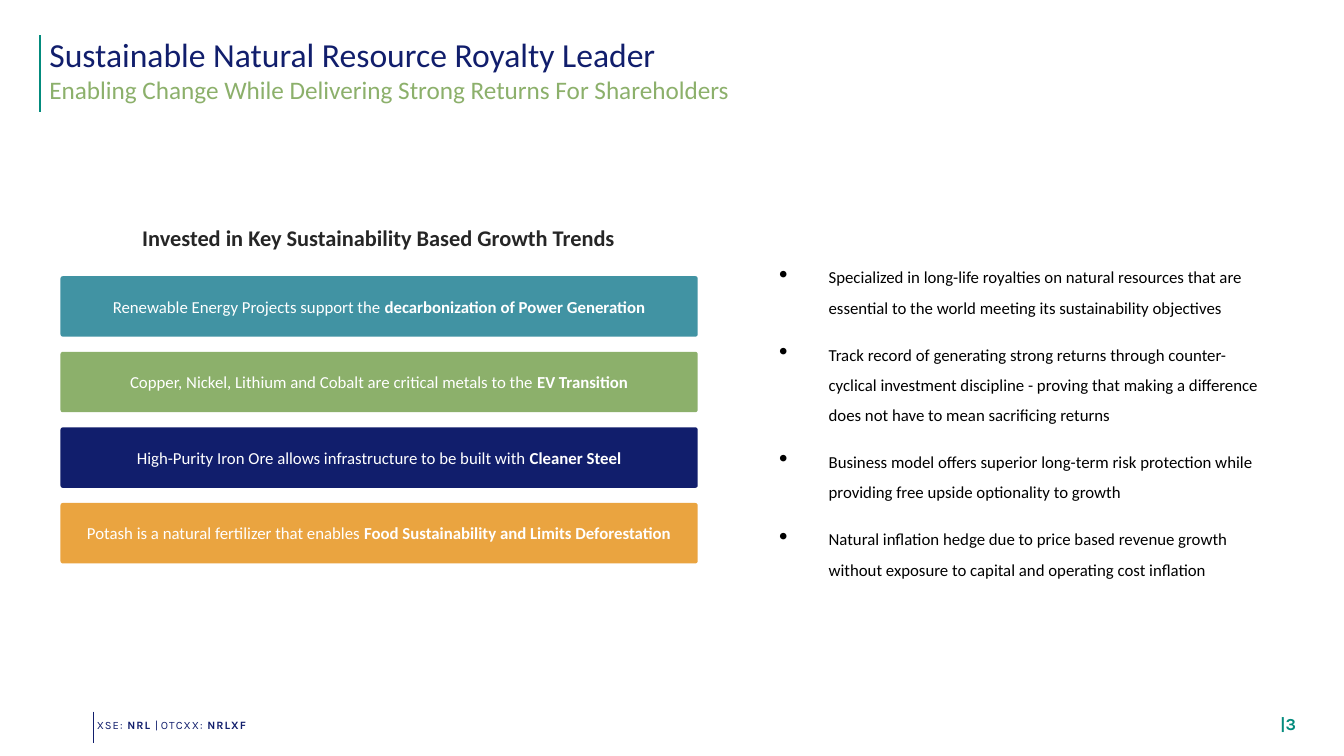
from dataclasses import dataclass

from lxml.etree import SubElement
from pptx import Presentation
from pptx.dml.color import RGBColor
from pptx.enum.shapes import MSO_CONNECTOR as Connector, MSO_SHAPE as Preset
from pptx.enum.text import MSO_ANCHOR as Anchor, PP_ALIGN as Align
from pptx.oxml.ns import qn
from pptx.slide import Slide
from pptx.text.text import TextFrame, _Paragraph as Paragraph
from pptx.util import Inches, Pt


@dataclass(frozen=True)
class Theme:
    """Colours, fonts and type sizes of the slide."""
    navy: str = "111E6C"
    green: str = "8CB06B"
    teal: str = "4193A3"
    orange: str = "EAA440"
    accent: str = "038B7D"
    heading: str = "262626"
    black: str = "000000"
    white: str = "FFFFFF"
    body_font: str = "Calibri"
    footer_font: str = "Karla"
    title_size: int = 24
    subtitle_size: int = 18
    heading_size: int = 16
    body_size: int = 12
    footer_size: int = 8


THEME = Theme()


@dataclass(frozen=True)
class Style:
    """Look of a run of text."""
    size: int
    color: str
    font: str = THEME.body_font


@dataclass(frozen=True)
class Box:
    """Place of an object in inches."""
    left: float
    top: float
    width: float
    height: float


@dataclass(frozen=True)
class Trend:
    """Coloured bar with a lead-in and a bold ending."""
    color: str
    lead: str
    emphasis: str


@dataclass(frozen=True)
class Rule:
    """Vertical line."""
    left: float
    top: float
    height: float
    color: str
    width: float


@dataclass(frozen=True)
class FooterRun:
    """Piece of the footer with its tracking."""
    text: str
    bold: bool = False
    tracking: int = 70


FIRST_BAR = Box(0.6, 2.74, 6.32, 0.6)
BAR_PITCH = 0.75
BAR_CORNER = 0.039
TRENDS = (
    Trend(THEME.teal, "Renewable Energy Projects support the ", "decarbonization of Power Generation"),
    Trend(THEME.green, "Copper, Nickel, Lithium and Cobalt are critical metals to the ", "EV Transition"),
    Trend(THEME.navy, "High-Purity Iron Ore allows infrastructure to be built with ", "Cleaner Steel"),
    Trend(THEME.orange, "Potash is a natural fertilizer that enables ",
          "Food Sustainability and Limits Deforestation"),
)
STRENGTHS = (
    "Specialized in long-life royalties on natural resources that are essential to the world "
    "meeting its sustainability objectives",
    "Track record of generating strong returns through counter-cyclical investment discipline - "
    "proving that making a difference does not have to mean sacrificing returns",
    "Business model offers superior long-term risk protection while providing free upside "
    "optionality to growth",
    "Natural inflation hedge due to price based revenue growth without exposure to capital and "
    "operating cost inflation",
)
RULES = (
    Rule(0.4, 0.35, 0.76, THEME.accent, 1.5),
    Rule(0.93, 7.06, 0.31, THEME.navy, 0.5),
)
FOOTER = (
    FooterRun("XSE: "),
    FooterRun("NRL ", bold=True),
    FooterRun("| ", tracking=0),
    FooterRun("OTCXX: "),
    FooterRun("NRLXF", bold=True),
)


def add_run(paragraph: Paragraph, text: str, style: Style, bold: bool = False, tracking: int = 0) -> None:
    """Append a styled run to a paragraph."""
    run = paragraph.add_run()
    run.text = text
    run.font.size = Pt(style.size)
    run.font.name = style.font
    run.font.bold = bold
    run.font.color.rgb = RGBColor.from_string(style.color)
    if tracking:
        run.font._element.set("spc", str(tracking))


def add_text(slide: Slide, box: Box, inset: bool = True) -> TextFrame:
    """Add a wrapping text box, with or without the usual insets."""
    frame = slide.shapes.add_textbox(
        Inches(box.left), Inches(box.top), Inches(box.width), Inches(box.height)).text_frame
    frame.word_wrap = True
    if not inset:
        frame.margin_left = frame.margin_right = frame.margin_bottom = 0
        frame.margin_top = Inches(0.01)
    return frame


def add_trend(slide: Slide, trend: Trend, box: Box) -> None:
    """Add a rounded bar with its centred text."""
    shape = slide.shapes.add_shape(
        Preset.ROUNDED_RECTANGLE,
        Inches(box.left), Inches(box.top), Inches(box.width), Inches(box.height))
    shape.adjustments[0] = BAR_CORNER
    shape.shadow.inherit = False
    shape.fill.solid()
    shape.fill.fore_color.rgb = RGBColor.from_string(trend.color)
    shape.line.fill.background()
    frame = shape.text_frame
    frame.word_wrap = True
    frame.vertical_anchor = Anchor.MIDDLE
    paragraph = frame.paragraphs[0]
    paragraph.alignment = Align.CENTER
    style = Style(THEME.body_size, THEME.white)
    add_run(paragraph, trend.lead, style)
    add_run(paragraph, trend.emphasis, style, bold=True)


def add_rule(slide: Slide, rule: Rule) -> None:
    """Add a vertical line without a shadow."""
    line = slide.shapes.add_connector(
        Connector.STRAIGHT, Inches(rule.left), Inches(rule.top),
        Inches(rule.left), Inches(rule.top + rule.height))
    line.line.color.rgb = RGBColor.from_string(rule.color)
    line.line.width = Pt(rule.width)
    SubElement(line._element.spPr, qn("a:effectLst"))


def add_bullets(frame: TextFrame, texts: tuple[str, ...], style: Style) -> None:
    """Fill a text frame with bulleted paragraphs."""
    for index, text in enumerate(texts):
        paragraph = frame.add_paragraph() if index else frame.paragraphs[0]
        properties = paragraph._p.get_or_add_pPr()
        properties.set("marL", str(Inches(0.49)))
        properties.set("indent", str(-Inches(0.49)))
        SubElement(properties, qn("a:buSzPct"), val="150000")
        SubElement(properties, qn("a:buChar"), char="•")
        paragraph.line_spacing = 1.5
        paragraph.space_after = Pt(12)
        add_run(paragraph, text, style)


def main() -> None:
    """Build the slide and save it."""
    presentation = Presentation()
    presentation.slide_width = Inches(13.33)
    presentation.slide_height = Inches(7.5)
    slide = presentation.slides.add_slide(presentation.slide_layouts[6])

    for rule in RULES:
        add_rule(slide, rule)

    title = add_text(slide, Box(0.49, 0.33, 12.76, 1.07), inset=False)
    add_run(title.paragraphs[0], "Sustainable Natural Resource Royalty Leader",
            Style(THEME.title_size, THEME.navy))
    add_run(title.add_paragraph(), "Enabling Change While Delivering Strong Returns For Shareholders",
            Style(THEME.subtitle_size, THEME.green))

    heading = add_text(slide, Box(0.42, 2.17, 6.67, 0.37)).paragraphs[0]
    heading.alignment = Align.CENTER
    add_run(heading, "Invested in Key Sustainability Based Growth Trends",
            Style(THEME.heading_size, THEME.heading), bold=True)

    for index, trend in enumerate(TRENDS):
        top = FIRST_BAR.top + index * BAR_PITCH
        add_trend(slide, trend, Box(FIRST_BAR.left, top, FIRST_BAR.width, FIRST_BAR.height))

    add_bullets(add_text(slide, Box(7.63, 2.5, 5.08, 4.08)), STRENGTHS,
                Style(THEME.body_size, THEME.black))

    footer = add_text(slide, Box(0.96, 7.12, 1.58, 0.16), inset=False).paragraphs[0]
    for piece in FOOTER:
        add_run(footer, piece.text, Style(THEME.footer_size, THEME.navy, THEME.footer_font),
                piece.bold, piece.tracking)

    page = add_text(slide, Box(12.7, 7.07, 0.63, 0.22), inset=False).paragraphs[0]
    add_run(page, "|3", Style(THEME.body_size, THEME.accent, THEME.footer_font), bold=True)

    presentation.save("out.pptx")


if __name__ == "__main__":
    main()
